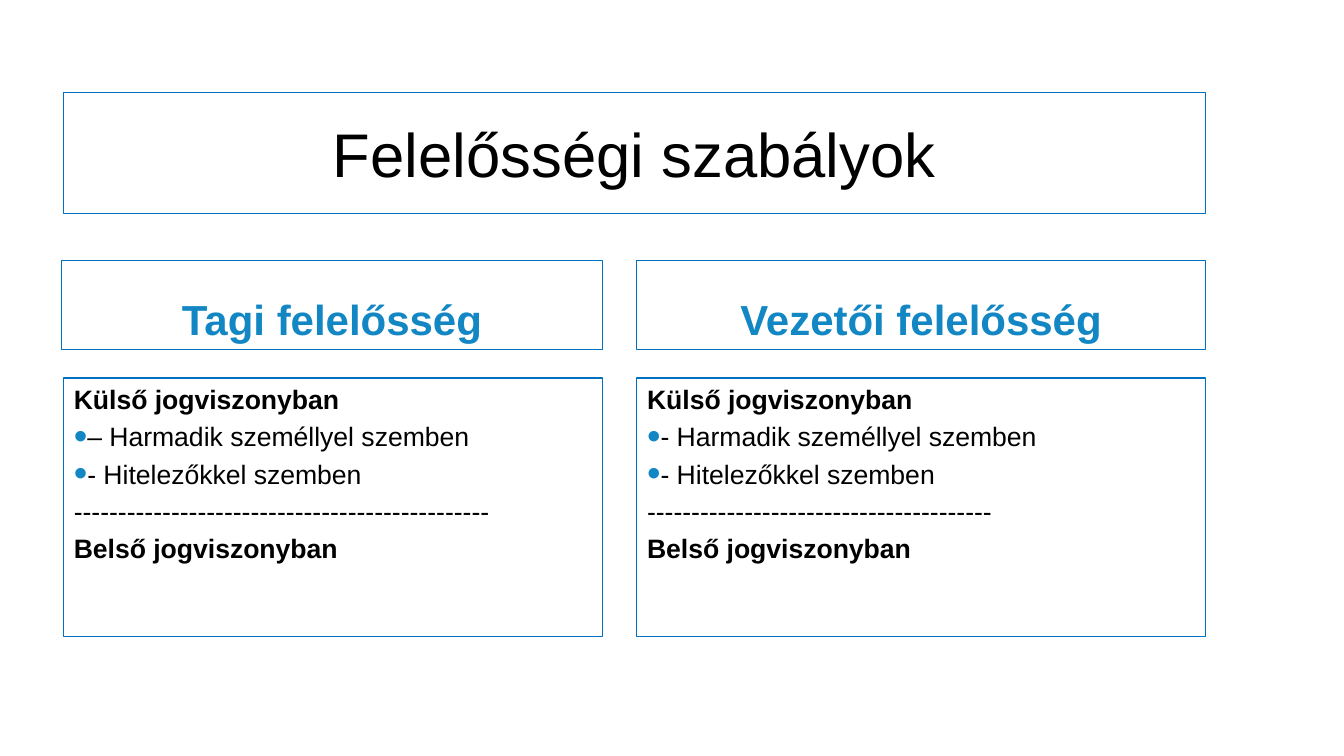
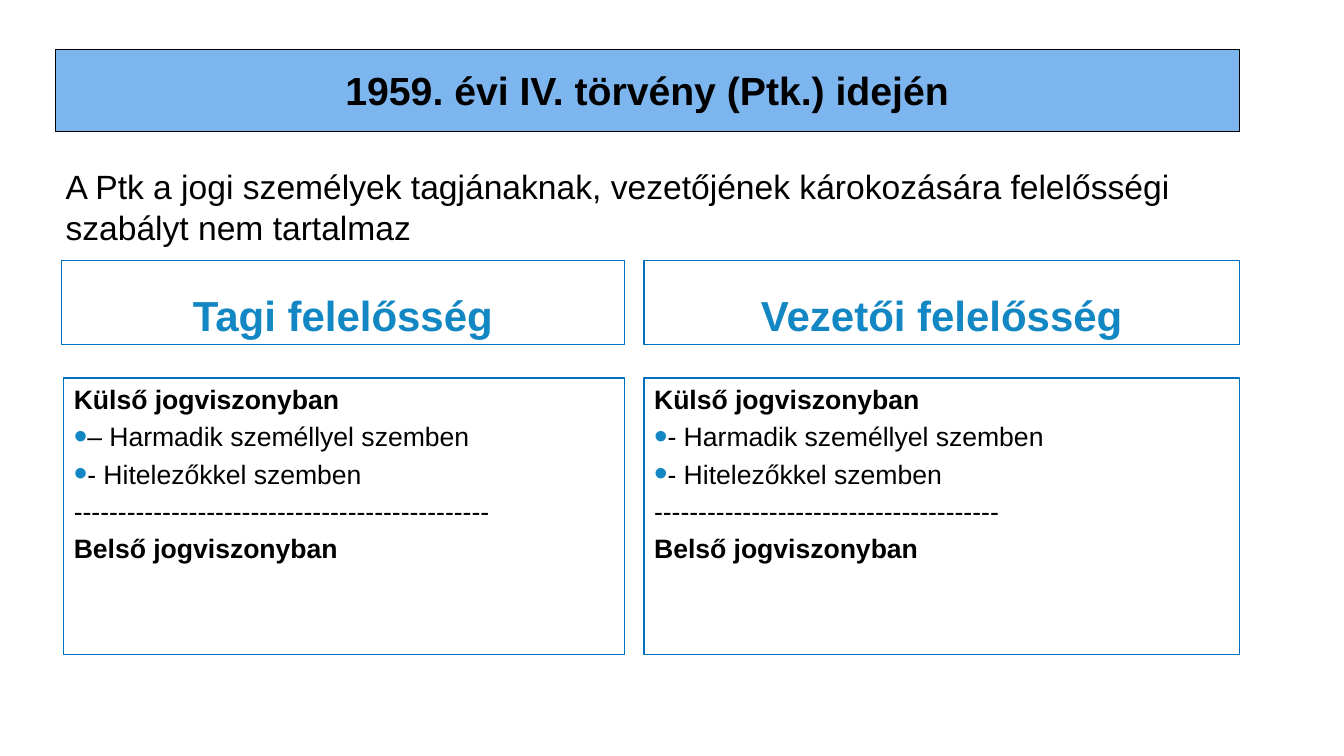
"""Build two slides comparing member and executive liability rules."""
from dataclasses import dataclass

from lxml.etree import SubElement
from pptx import Presentation
from pptx.dml.color import RGBColor
from pptx.enum.text import MSO_ANCHOR, MSO_AUTO_SIZE, PP_ALIGN
from pptx.oxml.ns import qn
from pptx.util import Pt


@dataclass(frozen=True)
class Theme:
    font: str = "Arial"
    ink: str = "000000"
    accent: str = "1287C3"
    frame: str = "0070C0"
    band: str = "7DB6EF"
    title_size: int = 44
    heading_size: int = 30
    band_size: int = 28
    statement_size: int = 24
    rule_size: int = 19
    frame_width: float = 0.75
    band_line_width: float = 0.5
    bullet_percent: int = 145


THEME = Theme()
COMPARISON_LAYOUT = 4
HEADING_TOP = 186
RULES_TOP = 270
COLUMNS = (
    ("Tagi felelősség", "–", 47),
    ("Vezetői felelősség", "-", 39),
)


def write(paragraph, text, size, color=THEME.ink, bold=False,
          align=PP_ALIGN.LEFT):
    run = paragraph.add_run()
    run.text = text
    run.font.name = THEME.font
    run.font.size = Pt(size)
    run.font.bold = bold
    run.font.color.rgb = RGBColor.from_string(color)
    paragraph.alignment = align


def set_bullet(paragraph, bulleted):
    properties = paragraph._p.get_or_add_pPr()
    properties.set("marL", "0")
    properties.set("indent", "0")
    if not bulleted:
        SubElement(properties, qn("a:buNone"))
        return
    color = SubElement(properties, qn("a:buClr"))
    SubElement(color, qn("a:srgbClr"), val=THEME.accent)
    SubElement(properties, qn("a:buSzPct"), val=str(THEME.bullet_percent * 1000))
    SubElement(properties, qn("a:buFont"), typeface=THEME.font)
    SubElement(properties, qn("a:buChar"), char="•")


class Deck:
    def __init__(self):
        self.presentation = Presentation()
        self.presentation.slide_width = Pt(960)
        self.presentation.slide_height = Pt(540)
        self.slide = None

    def new_slide(self):
        layout = self.presentation.slide_layouts[COMPARISON_LAYOUT]
        self.slide = self.presentation.slides.add_slide(layout)

    def place(self, index, box, anchor, line=THEME.frame,
              line_width=THEME.frame_width):
        holder = self.slide.placeholders[index]
        holder.left, holder.top, holder.width, holder.height = map(Pt, box)
        holder.line.color.rgb = RGBColor.from_string(line)
        holder.line.width = Pt(line_width)
        frame = holder.text_frame
        frame.word_wrap = True
        frame.auto_size = MSO_AUTO_SIZE.NONE
        frame.vertical_anchor = anchor
        return holder

    def title(self, text, box):
        holder = self.place(0, box, MSO_ANCHOR.MIDDLE)
        write(holder.text_frame.paragraphs[0], text, THEME.title_size,
              align=PP_ALIGN.CENTER)

    def band_title(self, text, box):
        holder = self.place(0, box, MSO_ANCHOR.MIDDLE, line=THEME.ink,
                            line_width=THEME.band_line_width)
        holder.fill.solid()
        holder.fill.fore_color.rgb = RGBColor.from_string(THEME.band)
        write(holder.text_frame.paragraphs[0], text, THEME.band_size,
              bold=True, align=PP_ALIGN.CENTER)

    def statement(self, text, box):
        frame = self.slide.shapes.add_textbox(*map(Pt, box)).text_frame
        frame.word_wrap = True
        frame.margin_left = Pt(15.8)
        write(frame.paragraphs[0], text, THEME.statement_size)

    def heading(self, index, text, box):
        holder = self.place(index, box, MSO_ANCHOR.BOTTOM)
        write(holder.text_frame.paragraphs[0], text, THEME.heading_size,
              color=THEME.accent, bold=True, align=PP_ALIGN.CENTER)

    def rules(self, index, dash, divider_length, box):
        frame = self.place(index, box, MSO_ANCHOR.TOP).text_frame
        lines = (
            ("Külső jogviszonyban", True, False),
            (f"{dash} Harmadik személlyel szemben", False, True),
            ("- Hitelezőkkel szemben", False, True),
            ("-" * divider_length, False, False),
            ("Belső jogviszonyban", True, False),
        )
        for position, (text, bold, bulleted) in enumerate(lines):
            paragraph = frame.add_paragraph() if position else frame.paragraphs[0]
            set_bullet(paragraph, bulleted)
            write(paragraph, text, THEME.rule_size, bold=bold)

    def comparison(self, left_end, right_start, right_end,
                   heading_height, rules_height):
        spans = ((44, 45.5, left_end), (right_start, right_start, right_end))
        for column, (content, span) in enumerate(zip(COLUMNS, spans)):
            heading, dash, divider_length = content
            heading_left, rules_left, end = span
            index = 1 + 2 * column
            self.heading(index, heading, (heading_left, HEADING_TOP,
                                          end - heading_left, heading_height))
            self.rules(index + 1, dash, divider_length,
                       (rules_left, RULES_TOP, end - rules_left, rules_height))


def main():
    deck = Deck()

    deck.new_slide()
    deck.title("Felelősségi szabályok", (45.5, 65.8, 815.5, 86.4))
    deck.comparison(left_end=430.5, right_start=455, right_end=861,
                    heading_height=63.4, rules_height=185)

    deck.new_slide()
    deck.band_title("1959. évi IV. törvény (Ptk.) idején",
                    (39.5, 35.3, 845.5, 58.4))
    deck.statement("A Ptk a jogi személyek tagjánaknak, vezetőjének "
                   "károkozására felelősségi szabályt nem tartalmaz",
                   (31, 115.2, 854.5, 80))
    deck.comparison(left_end=446, right_start=460, right_end=885.5,
                    heading_height=60.4, rules_height=197.5)

    deck.presentation.save("out.pptx")


if __name__ == "__main__":
    main()
